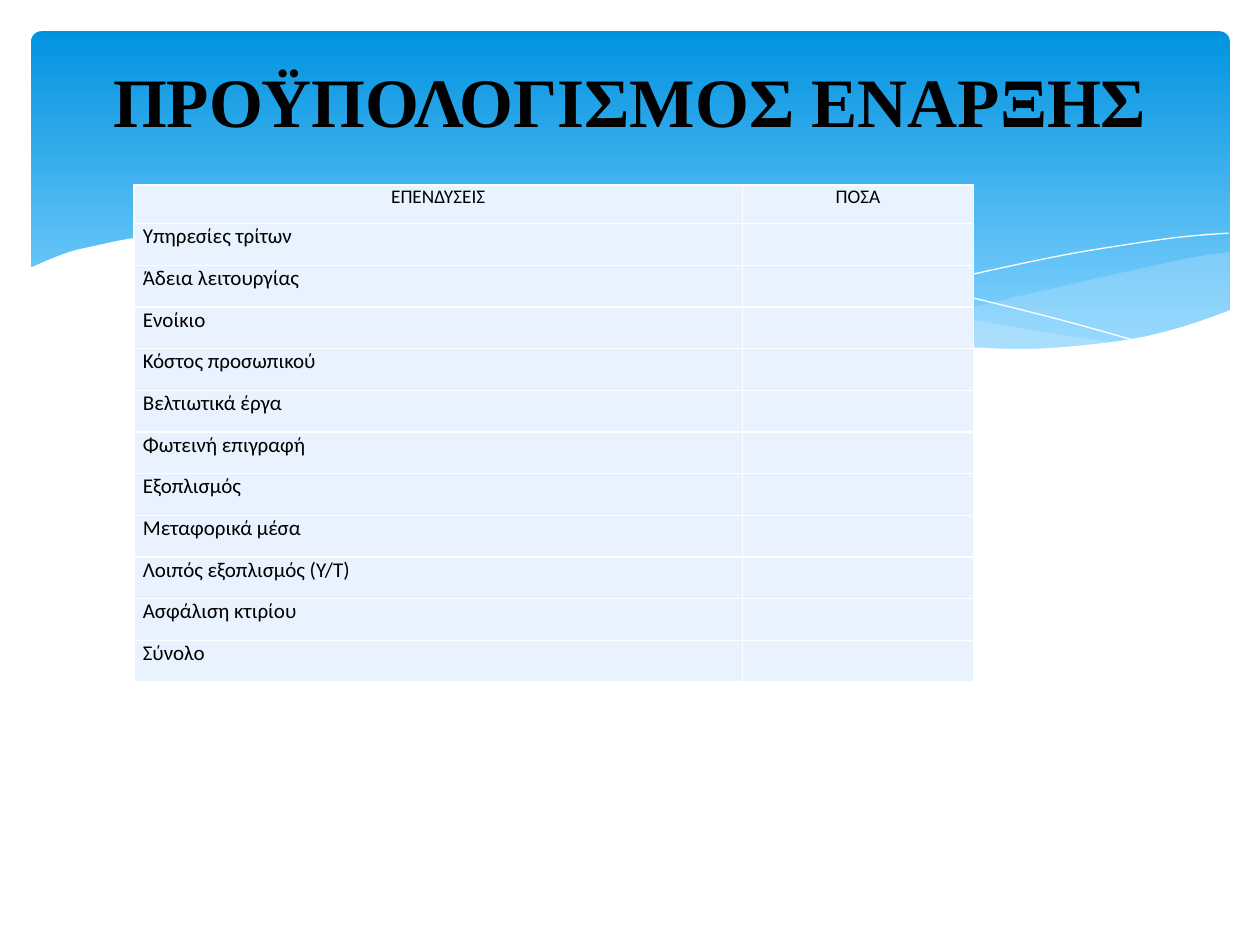
from dataclasses import dataclass
from typing import Optional

from lxml.etree import SubElement
from pptx import Presentation
from pptx.dml.color import RGBColor as RGB
from pptx.enum.shapes import MSO_SHAPE as Shape
from pptx.enum.text import MSO_ANCHOR as Anchor, PP_ALIGN as Align
from pptx.oxml.ns import qn
from pptx.util import Cm, Pt

COLORS = {
    "sky_top": "0293E0",
    "sky_bottom": "83D3FE",
    "mist": "C6E7FC",
    "white": "FFFFFF",
    "cell": "E8F3FF",
    "text": "000000",
}
ITEMS = [
    "Υπηρεσίες τρίτων", "Άδεια λειτουργίας", "Ενοίκιο", "Κόστος προσωπικού",
    "Βελτιωτικά έργα", "Φωτεινή επιγραφή", "Εξοπλισμός", "Μεταφορικά μέσα",
    "Λοιπός εξοπλισμός (Υ/Τ)", "Ασφάλιση κτιρίου", "Σύνολο",
]
CM_PER_INCH = 2.54
Point = tuple[float, float]


@dataclass
class Wave:
    """Smooth curves joined end to end; knots are in inches."""
    curves: list[list[Point]]
    fill: Optional[str] = None
    alpha: int = 100
    line: Optional[str] = None


WAVES = [
    Wave([[(9.76, 2), (9.48, 2.04), (9.06, 2.13), (8.61, 2.23), (7.79, 2.42),
           (7.06, 2.57), (6.61, 2.65)],
          [(6.61, 2.65), (7.05, 2.71), (7.57, 2.76), (8.03, 2.78), (8.54, 2.76),
           (8.97, 2.7), (9.35, 2.62), (9.76, 2.47)]], "mist", 29),
    Wave([[(8.93, 2.73), (8.37, 2.65), (7.75, 2.54), (7.06, 2.4), (6.29, 2.22),
           (5.69, 2.08), (5.14, 1.98), (4.65, 1.91), (4.2, 1.87), (3.8, 1.85),
           (3.44, 1.86), (2.86, 1.91)],
          [(2.86, 1.91), (3.42, 1.99), (4.04, 2.11), (4.49, 2.22), (5.3, 2.4),
           (6.01, 2.55), (6.65, 2.66), (7.22, 2.74), (7.73, 2.77), (8.18, 2.78),
           (8.57, 2.77), (8.93, 2.73)]], "mist", 40),
    Wave([[(3.09, 1.95), (3.44, 1.9), (3.87, 1.87), (4.33, 1.87), (4.89, 1.9),
           (5.56, 1.97), (6.36, 2.08), (7.27, 2.26), (8.31, 2.51),
           (9.07, 2.72)]], line="white"),
    Wave([[(6.13, 2.57), (6.72, 2.41), (7.48, 2.23), (8.36, 2.04), (8.95, 1.94),
           (9.38, 1.88), (9.75, 1.85)]], line="white"),
    Wave([[(9.77, 2.46), (9.4, 2.59), (8.99, 2.69), (8.5, 2.75), (8.09, 2.77),
           (7.61, 2.75), (7.08, 2.7), (6.48, 2.62), (5.79, 2.5), (5.03, 2.33),
           (4.47, 2.2), (3.91, 2.07), (3.4, 1.97), (2.92, 1.9), (2.5, 1.86),
           (1.93, 1.84), (1.46, 1.85), (1.06, 1.89), (0.76, 1.95), (0.52, 2.01),
           (0.23, 2.13)],
          [(0.23, 3.29), (9.77, 3.29)]], "white"),
]


def rgb(name: str) -> RGB:
    return RGB.from_string(COLORS[name])


def smooth(knots: list[Point], steps: int = 4) -> list[Point]:
    """Catmull-Rom curve through the knots."""
    if len(knots) < 3:
        return knots
    padded = [knots[0], *knots, knots[-1]]
    points = [knots[0]]
    for a, b, c, d in zip(padded, padded[1:], padded[2:], padded[3:]):
        for t in (i / steps for i in range(1, steps + 1)):
            x, y = (
                (2 * q + (r - p) * t + (2 * p - 5 * q + 4 * r - s) * t ** 2
                 + (3 * q - p - 3 * r + s) * t ** 3) / 2
                for p, q, r, s in zip(a, b, c, d))
            points.append((x, y))
    return points


def draw_wave(shapes, wave: Wave) -> None:
    points = [(Cm(x * CM_PER_INCH), Cm(y * CM_PER_INCH))
              for curve in wave.curves for x, y in smooth(curve)]
    builder = shapes.build_freeform(*points[0])
    builder.add_line_segments(points[1:], close=wave.fill is not None)
    sp = builder.convert_to_shape()
    sp.shadow.inherit = False
    if wave.fill:
        sp.fill.solid()
        sp.fill.fore_color.rgb = rgb(wave.fill)
        color = sp.fill._xPr.find(f".//{qn('a:srgbClr')}")
        SubElement(color, qn("a:alpha"), val=str(wave.alpha * 1000))
    else:
        sp.fill.background()
    if wave.line:
        sp.line.color.rgb = rgb(wave.line)
        sp.line.width = 0
    else:
        sp.line.fill.background()


def draw_sky(shapes) -> None:
    sp = shapes.add_shape(Shape.ROUNDED_RECTANGLE,
                          Cm(0.63), Cm(0.63), Cm(24.16), Cm(6.86))
    sp.adjustments[0] = 0.03
    sp.shadow.inherit = False
    sp.line.fill.background()
    sp.fill.gradient()
    sp.fill.gradient_angle = 270
    stops = zip(sp.fill.gradient_stops, ("sky_top", "sky_bottom"), (0, 0.9))
    for stop, color, position in stops:
        stop.color.rgb = rgb(color)
        stop.position = position


def set_font(font, name: str, size: float, bold: bool = False) -> None:
    for key, value in {"name": name, "size": Pt(size), "bold": bold}.items():
        setattr(font, key, value)
    font.color.rgb = rgb("text")


def fill_cell(cell, text: str, size: float, align: Align) -> None:
    margins = {"margin_left": Cm(0.18), "margin_right": Cm(0.18),
               "margin_top": 0, "margin_bottom": 0}
    for key, value in margins.items():
        setattr(cell, key, value)
    p = cell.text_frame.paragraphs[0]
    spacing = {"alignment": align, "space_before": Pt(1), "space_after": Pt(1)}
    for key, value in spacing.items():
        setattr(p, key, value)
    set_font(p.font, "Calibri", size)
    if text:
        r = p.add_run()
        r.text = text
        set_font(r.font, "Calibri", size)
    # Borders come before the fill in the cell properties
    for side in ("lnL", "lnR", "lnT", "lnB"):
        ln = SubElement(cell._tc.get_or_add_tcPr(), qn(f"a:{side}"), w=str(Pt(1)))
        solid = SubElement(ln, qn("a:solidFill"))
        SubElement(solid, qn("a:srgbClr"), val=COLORS["white"])
    cell.fill.solid()
    cell.fill.fore_color.rgb = rgb("cell")


def draw_budget(shapes) -> None:
    rows = [("ΕΠΕΝΔΥΣΕΙΣ", "ΠΟΣΑ")] + [(item, "") for item in ITEMS]
    widths, header, height = (Cm(12.27), Cm(4.65)), Cm(0.78), Cm(0.84)
    table = shapes.add_table(len(rows), 2, Cm(2.7), Cm(3.73), sum(widths),
                             header + height * len(ITEMS)).table
    for column, width in zip(table.columns, widths):
        column.width = width
    for i, texts in enumerate(rows):
        table.rows[i].height = height if i else header
        size, align = (12, Align.LEFT) if i else (11, Align.CENTER)
        for j, text in enumerate(texts):
            fill_cell(table.cell(i, j), text, size, align)


def draw_title(shapes) -> None:
    tf = shapes.add_textbox(Cm(1.27), Cm(0.94), Cm(22.86), Cm(3.48)).text_frame
    layout = {"word_wrap": True, "vertical_anchor": Anchor.TOP,
              "margin_top": Cm(0.23)}
    for key, value in layout.items():
        setattr(tf, key, value)
    p = tf.paragraphs[0]
    p.alignment = Align.CENTER
    r = p.add_run()
    r.text = "ΠΡΟΫΠΟΛΟΓΙΣΜΟΣ ΕΝΑΡΞΗΣ"
    set_font(r.font, "Times New Roman", 39.6, bold=True)


def main() -> None:
    prs = Presentation()
    prs.slide_width, prs.slide_height = Cm(25.4), Cm(19.05)
    shapes = prs.slides.add_slide(prs.slide_layouts[6]).shapes
    # Backdrop
    draw_sky(shapes)
    for wave in WAVES:
        draw_wave(shapes, wave)
    # Content
    draw_budget(shapes)
    draw_title(shapes)
    prs.save("out.pptx")


if __name__ == "__main__":
    main()
